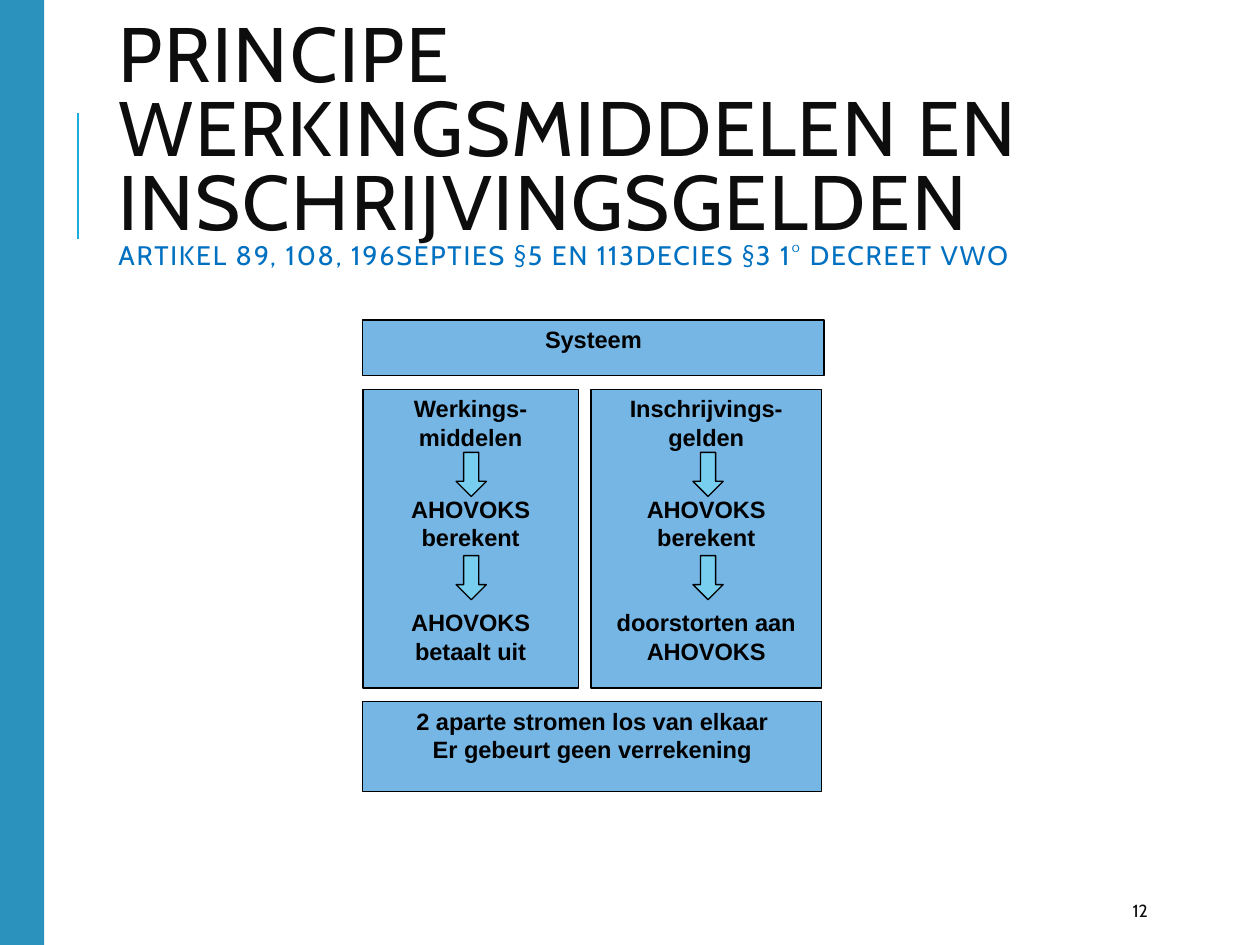
from dataclasses import dataclass

from lxml.etree import SubElement
from pptx import Presentation
from pptx.dml.color import RGBColor
from pptx.enum.shapes import MSO_CONNECTOR as Connector, MSO_SHAPE as Preset
from pptx.enum.text import MSO_ANCHOR as Anchor, MSO_AUTO_SIZE as AutoSize, PP_ALIGN as Align
from pptx.oxml.ns import qn
from pptx.util import Inches, Pt

# Grid of 100 columns by 75 rows
SLIDE_WIDTH, SLIDE_HEIGHT = Inches(10), Inches(7.5)
COLUMN, ROW = SLIDE_WIDTH / 100, SLIDE_HEIGHT / 75

BAR, RULE, PANEL, ARROW = "2B92BE", "1CADE4", "75B6E5", "77CEEF"
BLACK, INK, LAW_BLUE = "000000", "0D0D0D", "0070C0"
PANEL_INSETS = (0.7, 0.4, 0.7, 0.4)


@dataclass(frozen=True)
class Area:
    column: float
    row: float
    columns: float
    rows: float

    def lengths(self) -> tuple[int, ...]:
        return (int(self.column * COLUMN), int(self.row * ROW),
                int(self.columns * COLUMN), int(self.rows * ROW))


@dataclass(frozen=True)
class Panel:
    area: Area
    steps: tuple[str, ...]
    gaps: tuple[float, ...]  # points above each step


def color(hex_value: str) -> RGBColor:
    return RGBColor.from_string(hex_value)


def write(paragraph, text: str, *, size: float, font: str, ink: str,
          bold: bool = False, spacing: int = 0) -> None:
    run = paragraph.add_run()
    run.text = text
    run.font.size, run.font.name, run.font.bold = Pt(size), font, bold
    run.font.color.rgb = color(ink)
    if spacing:
        run.font._element.set("spc", str(spacing))


def set_frame(frame, insets: tuple[float, ...], anchor: Anchor) -> None:
    frame.word_wrap, frame.auto_size = True, AutoSize.NONE
    frame.vertical_anchor = anchor
    left, top, right, bottom = insets
    frame.margin_left, frame.margin_right = int(left * COLUMN), int(right * COLUMN)
    frame.margin_top, frame.margin_bottom = int(top * ROW), int(bottom * ROW)


def draw_shape(slide, preset: Preset, area: Area, fill: str, outline: str = ""):
    shape = slide.shapes.add_shape(preset, *area.lengths())
    shape.shadow.inherit = False
    shape.fill.solid()
    shape.fill.fore_color.rgb = color(fill)
    if outline:
        shape.line.color.rgb = color(outline)
        shape.line.width = Pt(0.75)
    else:
        shape.line.fill.background()
    return shape


def draw_panel(slide, panel: Panel) -> None:
    frame = draw_shape(slide, Preset.RECTANGLE, panel.area, PANEL, BLACK).text_frame
    set_frame(frame, PANEL_INSETS, Anchor.TOP)
    for index, (step, gap) in enumerate(zip(panel.steps, panel.gaps)):
        paragraph = frame.add_paragraph() if index else frame.paragraphs[0]
        paragraph.alignment = Align.CENTER
        paragraph.space_before = Pt(gap)
        write(paragraph, step, size=13.5, font="Arial", ink=BLACK, bold=True)


def draw_rule(slide, column: float, top: float, bottom: float) -> None:
    rule = slide.shapes.add_connector(
        Connector.STRAIGHT, int(column * COLUMN), int(bottom * ROW),
        int(column * COLUMN), int(top * ROW))
    rule.line.color.rgb = color(RULE)
    rule.line.width = Pt(1.5)
    SubElement(rule._element.spPr, qn("a:effectLst"))


def draw_title(slide, area: Area) -> None:
    title = slide.shapes.title
    title.left, title.top, title.width, title.height = area.lengths()
    # The deep bottom inset lifts the centred lines
    set_frame(title.text_frame, (1, 0.5, 1, 6.4), Anchor.MIDDLE)
    paragraph = title.text_frame.paragraphs[0]
    paragraph.alignment, paragraph.line_spacing = Align.LEFT, 0.8
    write(paragraph, "PRINCIPE WERKINGSMIDDELEN EN INSCHRIJVINGSGELDEN",
          size=44.1, font="Cabin", ink=INK, spacing=100)
    paragraph.add_line_break()
    write(paragraph, "ARTIKEL 89, 108, 196SEPTIES §5 EN 113DECIES §3 1° DECREET VWO",
          size=15.3, font="Cabin", ink=LAW_BLUE, spacing=100)


STREAM_GAPS = (0, 25, 32.4)
PANELS = (
    Panel(Area(28.8, 25.4, 36.6, 4.4), ("Systeem",), (0,)),
    Panel(Area(28.8, 30.9, 17.1, 23.7),
          ("Werkings-middelen", "AHOVOKS berekent", "AHOVOKS betaalt uit"), STREAM_GAPS),
    Panel(Area(46.9, 30.9, 18.3, 23.7),
          ("Inschrijvings- gelden", "AHOVOKS berekent", "doorstorten aan AHOVOKS"),
          STREAM_GAPS),
    Panel(Area(28.8, 55.7, 36.4, 7.1),
          ("2 aparte stromen los van elkaar", "Er gebeurt geen verrekening"), (0, 0)),
)


def main() -> None:
    deck = Presentation()
    deck.slide_width, deck.slide_height = SLIDE_WIDTH, SLIDE_HEIGHT
    slide = deck.slides.add_slide(deck.slide_layouts[5])

    # Side bar, rule and title
    draw_rule(slide, column=6.2, top=9, bottom=19)
    draw_shape(slide, Preset.RECTANGLE, Area(0, 0, 3.5, 75), BAR)
    draw_title(slide, Area(8.4, 6.4, 79.7, 16.4))

    # Panels of the scheme
    for panel in PANELS:
        draw_panel(slide, panel)

    # Arrows between the steps of both streams
    for column in (36.2, 55):
        for row in (35.9, 44.1):
            draw_shape(slide, Preset.DOWN_ARROW, Area(column, row, 2.4, 3.5), ARROW, BLACK)

    # Slide number
    number = slide.shapes.add_textbox(*Area(88.9, 70.8, 8, 3).lengths()).text_frame
    set_frame(number, (1, 0.5, 1, 0.5), Anchor.MIDDLE)
    write(number.paragraphs[0], "12", size=10, font="Cabin", ink=INK)

    deck.save("out.pptx")


if __name__ == "__main__":
    main()
